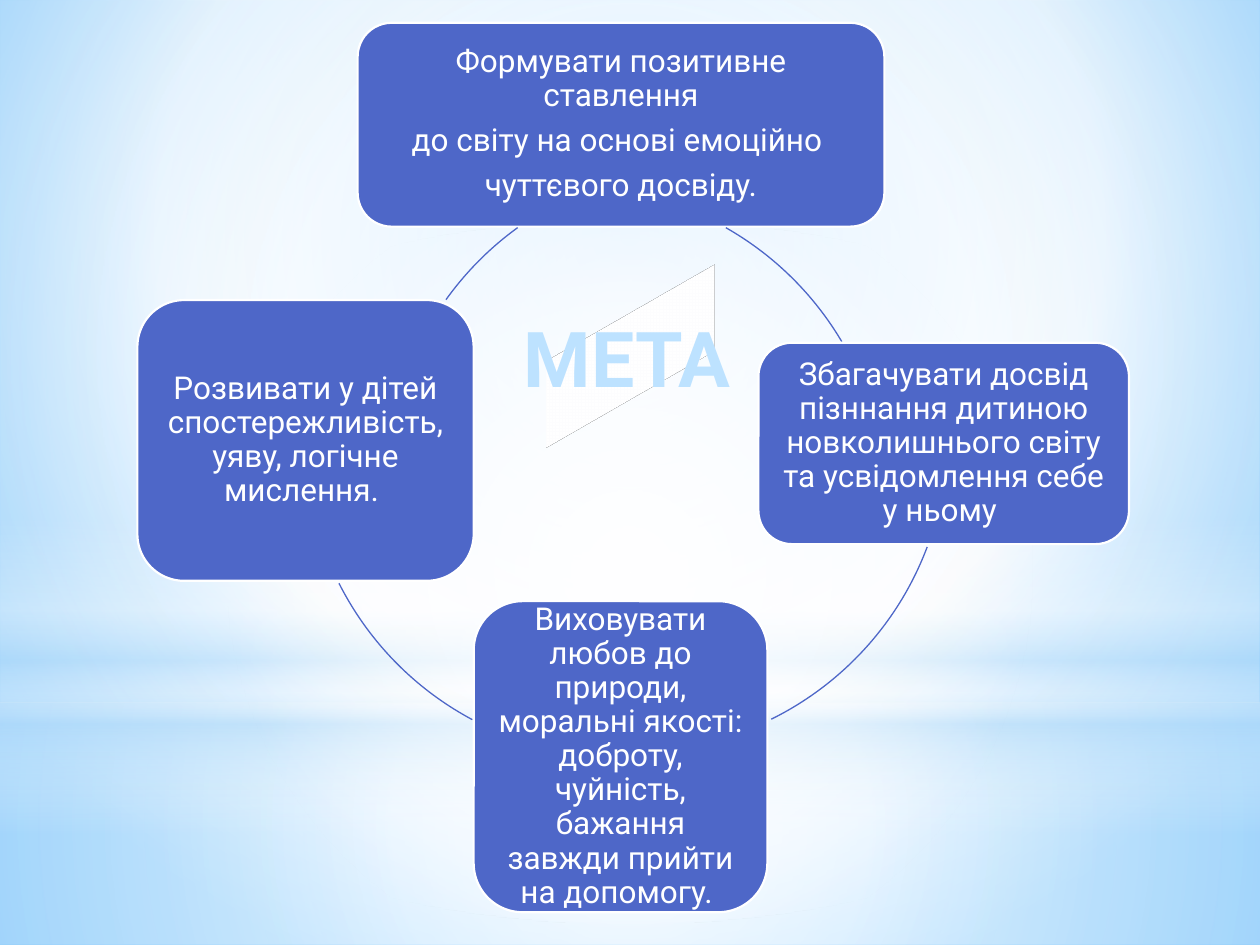
from lxml import etree
from pptx import Presentation
from pptx.dml.color import RGBColor
from pptx.enum.shapes import MSO_SHAPE
from pptx.enum.text import MSO_ANCHOR, MSO_AUTO_SIZE, PP_ALIGN
from pptx.oxml import parse_xml
from pptx.oxml.ns import qn
from pptx.util import Cm, Pt

RECT, OVAL = MSO_SHAPE.RECTANGLE, MSO_SHAPE.OVAL
ROUND, ARC = MSO_SHAPE.ROUNDED_RECTANGLE, MSO_SHAPE.ARC
MID, LEFT, CENTER = MSO_ANCHOR.MIDDLE, PP_ALIGN.LEFT, PP_ALIGN.CENTER
GROW = MSO_AUTO_SIZE.SHAPE_TO_FIT_TEXT
NS = 'xmlns:a="http://schemas.openxmlformats.org/drawingml/2006/main"'
COLORS = {"white": "FFFFFF", "blue": "4E67C8", "haze": "B4DCFA", "sky": "9ED5FF",
          "deep": "5BB9FF", "pale": "BDE2FF", "teal": "1999C6"}
RGB = {name: RGBColor.from_string(code) for name, code in COLORS.items()}


def grade(props, stops, focus=None):
    """Swap the solid fill for a gradient: round about focus, or top to bottom."""
    marks = "".join(
        f'<a:gs pos="{pos * 1000}"><a:srgbClr val="{COLORS[name]}">'
        f'<a:alpha val="{alpha * 1000}"/></a:srgbClr></a:gs>'
        for pos, name, alpha in stops)
    if focus:
        sides = " ".join(f'{side}="{part * 1000}"' for side, part in zip("ltrb", focus))
        way = f'<a:path path="circle"><a:fillToRect {sides}/></a:path>'
    else:
        way = '<a:lin ang="5400000" scaled="0"/>'
    fill = parse_xml(f'<a:gradFill {NS} rotWithShape="1"><a:gsLst>{marks}</a:gsLst>{way}</a:gradFill>')
    props.replace(props.find(qn("a:solidFill")), fill)


def write(shape, lines, size=18, color="white", bold=False, align=CENTER,
          lead=None, after=None):
    frame = shape.text_frame
    frame.word_wrap = True
    for i, line in enumerate(lines):
        para = frame.add_paragraph() if i else frame.paragraphs[0]
        para.alignment, para.line_spacing, para.space_after = align, lead, after
        run = para.add_run()
        run.text = line
        run.font.name, run.font.size, run.font.bold = "Roboto", Pt(size), bold
        run.font.color.rgb = RGB[color]


prs = Presentation()
prs.slide_width, prs.slide_height = Cm(25.4), Cm(19.05)
slide = prs.slides.add_slide(prs.slide_layouts[6])
shapes = slide.shapes

# Background and its soft light
slide.background.fill.solid()
grade(slide.element.find(".//" + qn("p:bgPr")),
      [(0, "sky", 100), (60, "white", 100), (100, "deep", 100)], (20, 10, 20, 60))
middle = (50, 50, 50, 50)
lights = [
    (RECT, 14.17, 4.88, [(0, "white", 91), (37, "white", 76), (100, "haze", 79)], middle),
    (RECT, 0, 14.17, [(0, "white", 89), (48, "white", 62), (100, "haze", 79)], middle),
    (RECT, 10.46, 6.35, [(0, "white", 0), (29, "white", 30), (45, "haze", 40),
                         (55, "white", 26), (65, "haze", 60), (100, "white", 0)], None),
    (OVAL, 4.45, 14.17, [(0, "white", 100), (56, "white", 0)], middle),
]
for kind, top, height, stops, focus in lights:
    light = shapes.add_shape(kind, 0, Cm(top), prs.slide_width, Cm(height))
    light.shadow.inherit = False
    light.fill.solid()
    light.line.fill.background()
    grade(light.element.spPr, stops, focus)

# Cycle: each goal, then the arc that leads on (left, top, start and end degrees)
goals = [
    ((7.21, 0.46, 10.62, 4.11), (5.11, 3.76, 299.6, 329.4),
     ["Формувати позитивне ставлення", "до світу на основі емоційно ", "чуттєвого досвіду."]),
    ((15.29, 6.91, 7.47, 4.06), (6.35, 2.41, 20.6, 63.7),
     ["Збагачувати досвід пізннання дитиною новколишнього світу та усвідомлення себе у ньому "]),
    ((9.55, 12.12, 5.92, 6.27), (6.15, 2.51, 118.1, 153.2),
     ["Виховувати любов до природи, моральні якості: доброту, чуйність, бажання завжди прийти на допомогу. "]),
    ((2.77, 6.05, 6.78, 5.66), (7.8, 3.38, 215.6, 234.1),
     ["Розвивати у дітей спостережливість, уяву, логічне мислення. "]),
]
RING = Cm(12.75)
for place, (left, top, start, end), lines in goals:
    goal = shapes.add_shape(ROUND, *map(Cm, place))
    goal.shadow.inherit = False
    goal.fill.solid()
    goal.fill.fore_color.rgb = RGB["blue"]
    goal.line.color.rgb, goal.line.width = RGB["white"], Pt(1.25)
    frame = goal.text_frame
    frame.vertical_anchor = MID
    frame.margin_left = frame.margin_right = Cm(0.18)
    frame.margin_top = frame.margin_bottom = Cm(0.18)
    write(goal, lines, lead=0.9, after=Pt(6.3))

    arc = shapes.add_shape(ARC, Cm(left), Cm(top), RING, RING)
    arc.shadow.inherit = False
    arc.fill.background()
    arc.line.color.rgb, arc.line.width = RGB["blue"], Pt(0.75)
    for i, angle in enumerate((start, end)):
        arc.adjustments[i] = angle * 0.6  # 60000 units a degree, scaled by 100000

# Title on a tilted plate
plate = shapes.add_shape(RECT, Cm(10.31), Cm(6.12), Cm(4.8), Cm(2.13))
plate.shadow.inherit = False
plate.fill.solid()
plate.fill.fore_color.rgb = RGB["white"]
plate.line.color.rgb, plate.line.width = RGB["teal"], Pt(1.25)
scene = etree.SubElement(plate.element.spPr, qn("a:scene3d"))
etree.SubElement(scene, qn("a:camera"), prst="isometricRightUp")
etree.SubElement(scene, qn("a:lightRig"), rig="threePt", dir="t")
write(plate, ["МЕТА"], size=44, color="pale", bold=True, align=LEFT)
plate.text_frame.auto_size = GROW

prs.save("out.pptx")
